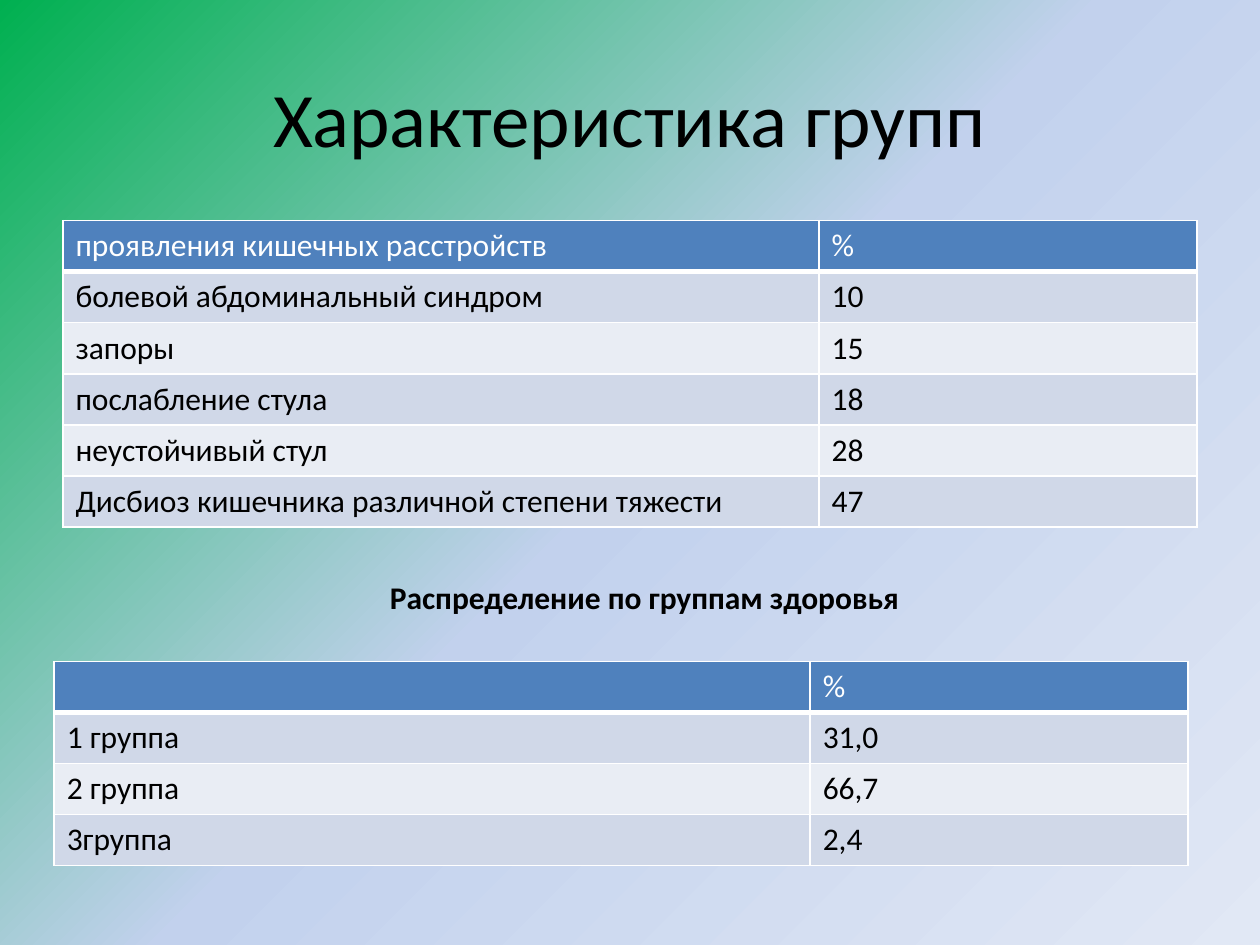
import copy

import pptx
import pptx.dml.color
import pptx.enum.text
import pptx.oxml.ns
import pptx.util
from lxml import etree

WIDTH, HEIGHT = 10, 7.5
FONT = "Calibri"
COLORS = {
    "text": "000000",
    "header_text": "FFFFFF",
    "border": "FFFFFF",
    "header": "4F81BD",
    "odd_row": "D0D8E8",
    "even_row": "E9EDF4",
}
GRADIENT = [(0, "00B050"), (0.5, "C2D1ED"), (1, "E1E8F5")]
COLUMN_WIDTHS = [0.6 * WIDTH, 0.3 * WIDTH]
ROW_HEIGHT = 0.054 * HEIGHT

DISORDERS = [
    ("проявления кишечных расстройств", "%"),
    ("болевой абдоминальный синдром", "10"),
    ("запоры", "15"),
    ("послабление стула", "18"),
    ("неустойчивый стул", "28"),
    ("Дисбиоз кишечника различной степени тяжести", "47"),
]
HEALTH_GROUPS = [
    ("", "%"),
    ("1 группа", "31,0"),
    ("2 группа", "66,7"),
    ("3группа", "2,4"),
]


def rgb(name):
    return pptx.dml.color.RGBColor.from_string(COLORS[name])


def write(frame, text, size=18, color="text", bold=False, align=None):
    paragraph = frame.paragraphs[0]
    paragraph.alignment = align
    if not text:
        paragraph.font.size = pptx.util.Pt(size)
        return
    run = paragraph.add_run()
    run.text = text
    run.font.name = FONT
    run.font.size = pptx.util.Pt(size)
    run.font.bold = bold
    run.font.color.rgb = rgb(color)


def paint_background(slide):
    fill = slide.background.fill
    fill.gradient()
    fill.gradient_angle = 315  # counter-clockwise: runs to the lower right
    stop_list = slide.element.find(".//" + pptx.oxml.ns.qn("a:gsLst"))
    stop_list.insert(1, copy.deepcopy(stop_list[0]))
    for stop, (position, color) in zip(fill.gradient_stops, GRADIENT):
        stop.position = position
        stop.color.rgb = pptx.dml.color.RGBColor.from_string(color)


def add_borders(cell, bottom_width):
    qn = pptx.oxml.ns.qn
    properties = cell._tc.get_or_add_tcPr()
    for side, width in (("L", 1), ("R", 1), ("T", 1), ("B", bottom_width)):
        line = etree.SubElement(properties, qn(f"a:ln{side}"), w=str(pptx.util.Pt(width)))
        solid = etree.SubElement(line, qn("a:solidFill"))
        etree.SubElement(solid, qn("a:srgbClr"), val=COLORS["border"])


def add_percent_table(slide, left, top, rows):
    inches = pptx.util.Inches
    table = slide.shapes.add_table(
        len(rows), len(COLUMN_WIDTHS), inches(left), inches(top),
        inches(sum(COLUMN_WIDTHS)), inches(ROW_HEIGHT * len(rows)),
    ).table
    for column, width in zip(table.columns, COLUMN_WIDTHS):
        column.width = inches(width)
    for r, row in enumerate(rows):
        is_header = r == 0
        band = "header" if is_header else "odd_row" if r % 2 else "even_row"
        for c, text in enumerate(row):
            cell = table.cell(r, c)
            add_borders(cell, bottom_width=3 if is_header else 1)
            cell.fill.solid()
            cell.fill.fore_color.rgb = rgb(band)
            write(cell.text_frame, text, color="header_text" if is_header else "text")


def add_caption(slide, left, top, width, height, text):
    caption = slide.shapes.add_textbox(*map(pptx.util.Inches, (left, top, width, height)))
    caption.text_frame.word_wrap = True
    caption.text_frame.auto_size = pptx.enum.text.MSO_AUTO_SIZE.SHAPE_TO_FIT_TEXT
    write(caption.text_frame, text, bold=True, align=pptx.enum.text.PP_ALIGN.CENTER)


def add_title(slide, text):
    title = slide.shapes.title
    title.left, title.top, title.width, title.height = map(
        pptx.util.Inches, (0.05 * WIDTH, 0.04 * HEIGHT, 0.9 * WIDTH, HEIGHT / 6)
    )
    title.text_frame.vertical_anchor = pptx.enum.text.MSO_ANCHOR.MIDDLE
    write(title.text_frame, text, size=44, align=pptx.enum.text.PP_ALIGN.CENTER)


def main():
    presentation = pptx.Presentation()
    presentation.slide_width = pptx.util.Inches(WIDTH)
    presentation.slide_height = pptx.util.Inches(HEIGHT)
    slide = presentation.slides.add_slide(presentation.slide_layouts[5])

    # Background and heading
    paint_background(slide)
    add_title(slide, "Характеристика групп")

    # Intestinal disorders
    add_percent_table(slide, 0.05 * WIDTH, 1.75, DISORDERS)

    # Health groups
    add_caption(slide, 1.14, 4.54, 7.95, 0.4, "Распределение по группам здоровья")
    add_percent_table(slide, 0.43, 0.7 * HEIGHT, HEALTH_GROUPS)

    presentation.save("out.pptx")


if __name__ == "__main__":
    main()
